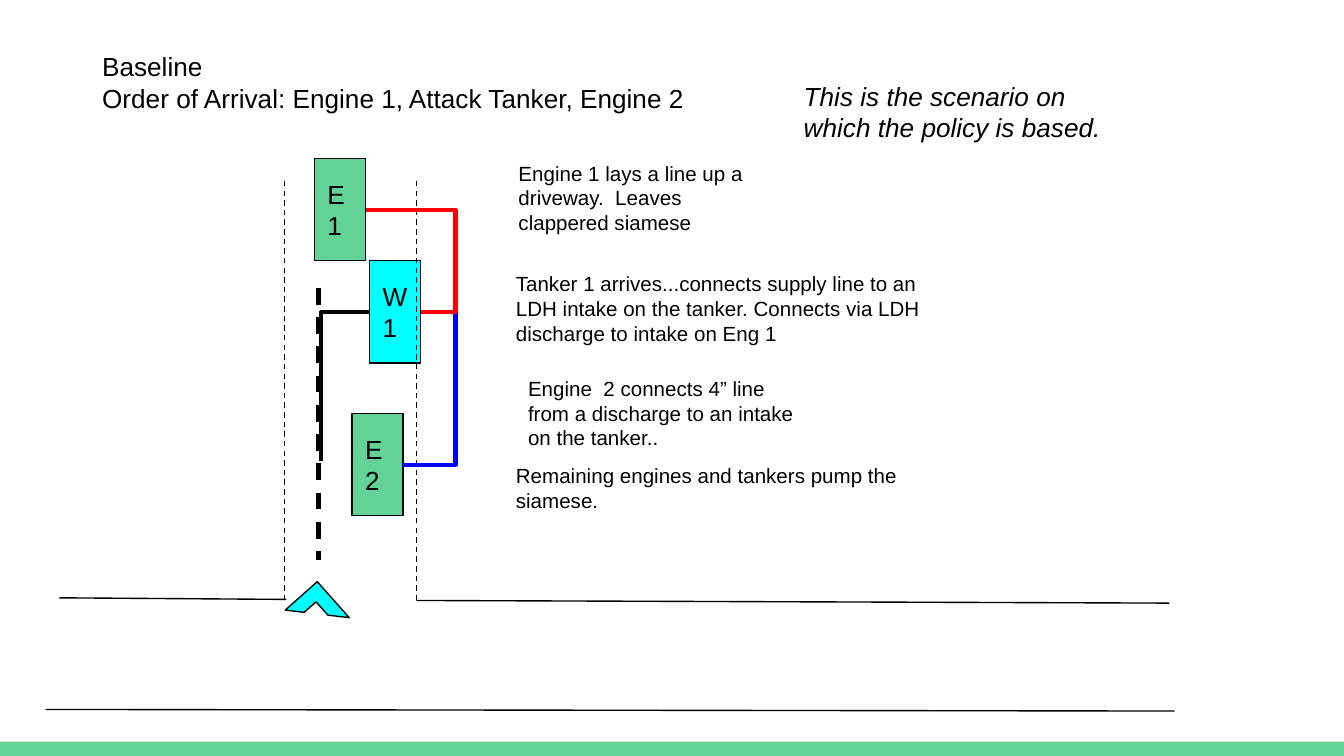
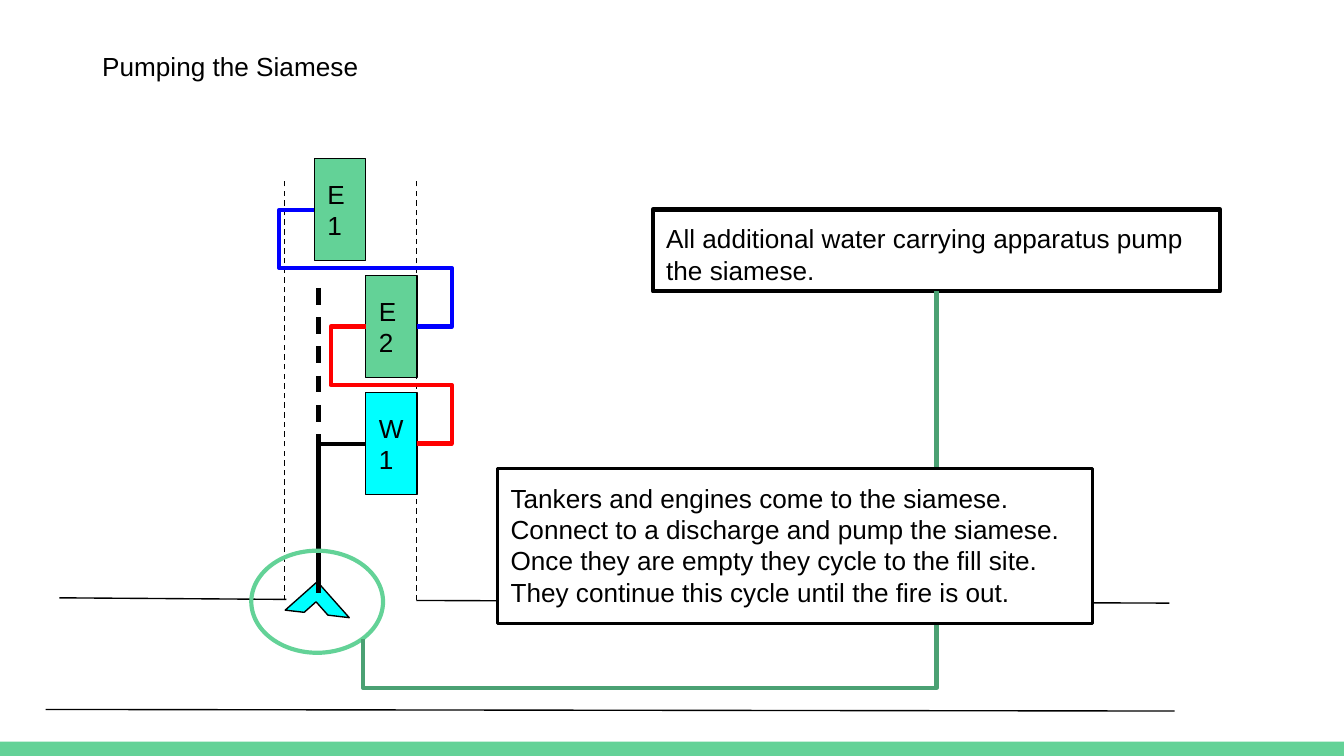
from lxml.etree import SubElement
from pptx import Presentation
from pptx.dml.color import RGBColor
from pptx.enum.dml import MSO_LINE
from pptx.enum.shapes import MSO_CONNECTOR as LINK, MSO_SHAPE as SHAPE
from pptx.enum.text import MSO_ANCHOR as ANCHOR, MSO_AUTO_SIZE as FIT, PP_ALIGN as ALIGN
from pptx.oxml.ns import qn
from pptx.util import Cm, Pt

GREEN = RGBColor(0x63, 0xD2, 0x97)
DARK_GREEN = RGBColor(0x4B, 0xA1, 0x73)
CYAN = RGBColor(0x00, 0xFF, 0xFF)
BLUE = RGBColor(0x00, 0x00, 0xFF)
RED = RGBColor(0xFF, 0x00, 0x00)
BLACK = RGBColor(0x00, 0x00, 0x00)
WHITE = RGBColor(0xFF, 0xFF, 0xFF)

FONT = "Arial"
WIDTH, HEIGHT = 25.4, 14.29
INSET = 0.25
THIN, THICK = 0.75, 2.25
TRUCK_WIDTH, TRUCK_HEIGHT = 0.97, 1.93
FIRST_TRUCK = (5.94, 3.0)
HOSE_REACH = 0.66  # how far a hose runs out beside a truck
HOSE_X, HOSE_TOP = 6.02, 5.44


# Text
def write(box, text, size=14, italic=False, anchor=ANCHOR.TOP):
    frame = box.text_frame
    frame.text = text
    frame.word_wrap = True
    frame.auto_size = FIT.NONE
    frame.vertical_anchor = anchor
    frame.margin_left = frame.margin_right = Cm(INSET)
    frame.margin_top = frame.margin_bottom = Cm(INSET)
    for para in frame.paragraphs:
        para.alignment = ALIGN.LEFT
        for span in para.runs:
            span.font.name = FONT
            span.font.size = Pt(size)
            span.font.italic = italic
            span.font.color.rgb = BLACK


def add_note(page, text, left, top, width, height, size=11, italic=False):
    box = page.shapes.add_textbox(Cm(left), Cm(top), Cm(width), Cm(height))
    write(box, text, size, italic)


def add_titled_page(deck, layout, title):
    page = deck.slides.add_slide(layout)
    box = page.shapes.title
    box.left, box.top, box.width, box.height = Cm(1.68), Cm(0.71), Cm(11.73), Cm(1.55)
    write(box, title)
    return page


# Shapes
def add_figure(page, kind, left, top, width, height, fill=None, line=BLACK, weight=THIN):
    shape = page.shapes.add_shape(kind, Cm(left), Cm(top), Cm(width), Cm(height))
    shape.shadow.inherit = False
    if fill is None:
        shape.fill.background()
    else:
        shape.fill.solid()
        shape.fill.fore_color.rgb = fill
    if line is None:
        shape.line.fill.background()
    else:
        shape.line.color.rgb = line
        shape.line.width = Pt(weight)
    return shape


def add_truck(page, name, place, fill=GREEN):
    truck = add_figure(page, SHAPE.RECTANGLE, *place, TRUCK_WIDTH, TRUCK_HEIGHT, fill)
    write(truck, name, anchor=ANCHOR.MIDDLE)


def left_of(place):
    return place[0], place[1] + TRUCK_HEIGHT / 2


def right_of(place):
    return place[0] + TRUCK_WIDTH, place[1] + TRUCK_HEIGHT / 2


# Lines
def add_link(page, kind, start, end, color, weight):
    link = page.shapes.add_connector(kind, *(Cm(value) for value in (*start, *end)))
    link.line.color.rgb = color
    link.line.width = Pt(weight)
    SubElement(link.element.spPr, qn("a:effectLst"))
    return link


def add_line(page, start, end, weight=THIN, dashed=False):
    line = add_link(page, LINK.STRAIGHT, start, end, BLACK, weight)
    if dashed:
        line.line.dash_style = MSO_LINE.DASH


def add_elbow(page, start, end, color, bends=()):
    """Draw a bent line that leaves sideways; bends are its x, y, x turns."""
    link = add_link(page, LINK.ELBOW, start, end, color, THICK)
    geometry = link.element.spPr.find(qn("a:prstGeom"))
    geometry.set("prst", f"bentConnector{len(bends) + 2}")
    guides = geometry.find(qn("a:avLst"))
    for index, bend in enumerate(bends):
        axis = index % 2
        ratio = (bend - start[axis]) / (end[axis] - start[axis])
        SubElement(guides, qn("a:gd"), name=f"adj{index + 1}",
                   fmla=f"val {round(ratio * 100000)}")
    return link


def add_upright_elbow(page, start, end, color, bend):
    """Draw a bent line that leaves downwards: a sideways one, turned 90 degrees."""
    middle_x, middle_y = (start[0] + end[0]) / 2, (start[1] + end[1]) / 2

    def turn(x, y):
        return middle_x + y - middle_y, middle_y - x + middle_x

    link = add_elbow(page, turn(*start), turn(*end), color, [turn(0, bend)[0]])
    link.rotation = 90


def add_s_hose(page, lower, upper, color):
    """Run a hose from the right of one truck to the left of the one above."""
    start, end = right_of(lower), left_of(upper)
    bends = start[0] + HOSE_REACH, (start[1] + end[1]) / 2, end[0] - HOSE_REACH
    add_elbow(page, start, end, color, bends)


# Scene shared by both slides
def add_roads(page):
    add_line(page, (1.12, 11.3), (5.41, 11.33))
    add_line(page, (0.86, 13.41), (22.2, 13.44))
    add_line(page, (7.87, 11.35), (22.1, 11.4))
    for side in (5.38, 7.87):
        add_line(page, (side, 11.35), (side, 3.35), dashed=True)


def add_siamese(page):
    siamese = add_figure(page, SHAPE.HALF_FRAME, 5.54, 11.2, 0.91, 0.81, CYAN)
    siamese.rotation = 48.4


def add_band(page, layout):
    band = add_figure(page, SHAPE.RECTANGLE, 0, 14.02, WIDTH, 0.27, GREEN, None)
    layout.shapes.element.append(band.element)


def fill_baseline(page):
    engine_1, engine_2, tanker = FIRST_TRUCK, (6.65, 7.82), (6.98, 4.93)
    add_truck(page, "E1", engine_1)
    add_truck(page, "E2", engine_2)
    add_truck(page, "W1", tanker, CYAN)
    add_roads(page)
    add_siamese(page)

    # Hoses
    bend = right_of(tanker)[0] + HOSE_REACH
    add_elbow(page, left_of(tanker), (6.07, 8.71), BLACK)
    add_elbow(page, right_of(engine_2), right_of(tanker), BLUE, [bend])
    add_elbow(page, right_of(tanker), right_of(engine_1), RED, [bend])
    add_line(page, (HOSE_X, HOSE_TOP), (HOSE_X, 10.59), THICK, dashed=True)

    # Steps
    add_note(page, "Engine 1 lays a line up a driveway.  Leaves clappered siamese",
             9.55, 2.79, 4.98, 1.55)
    add_note(page, "Tanker 1 arrives...connects supply line to an LDH intake on the tanker. "
             "Connects via LDH discharge to intake on Eng 1", 9.5, 4.88, 8.59, 1.93)
    add_note(page, "Engine  2 connects 4” line from a discharge to an intake on the tanker..",
             9.73, 6.86, 5.69, 1.93)
    add_note(page, "Remaining engines and tankers pump the siamese.", 9.5, 8.51, 8.59, 1.93)
    add_note(page, "This is the scenario on which the policy is based.",
             14.94, 1.27, 6.78, 2.08, size=14, italic=True)


def fill_pumping(page):
    engine_1, engine_2, tanker = FIRST_TRUCK, (6.91, 5.21), (6.91, 7.42)
    add_truck(page, "E1", engine_1)
    add_truck(page, "E2", engine_2)
    add_truck(page, "W1", tanker, CYAN)
    add_roads(page)
    add_siamese(page)

    # Hoses
    add_elbow(page, left_of(tanker), (HOSE_X, 11.2), BLACK)
    add_s_hose(page, engine_2, engine_1, BLUE)
    add_s_hose(page, tanker, engine_2, RED)
    add_line(page, (HOSE_X, HOSE_TOP), left_of(tanker)[:0] + (HOSE_X, left_of(tanker)[1]),
             THICK, dashed=True)

    # Callouts
    apparatus = add_figure(page, SHAPE.RECTANGLE, 12.34, 3.96, 10.72, 1.55, weight=THICK)
    write(apparatus, "All additional water carrying apparatus pump the siamese.")
    add_figure(page, SHAPE.OVAL, 4.75, 10.41, 2.49, 1.93, line=GREEN, weight=THICK)
    add_upright_elbow(page, (17.7, 5.51), (6.86, 12.07), DARK_GREEN, 13)
    cycle = add_figure(page, SHAPE.RECTANGLE, 9.4, 8.86, 11.25, 2.92, WHITE, weight=1.5)
    write(cycle, "Tankers and engines come to the siamese. Connect to a discharge and pump "
          "the siamese. Once they are empty they cycle to the fill site. "
          "They continue this cycle until the fire is out.")


def main():
    deck = Presentation()
    deck.slide_width, deck.slide_height = Cm(WIDTH), Cm(HEIGHT)
    layout = deck.slide_layouts[5]

    baseline = add_titled_page(
        deck, layout, "Baseline\nOrder of Arrival: Engine 1, Attack Tanker, Engine 2")
    add_band(baseline, layout)
    fill_baseline(baseline)

    fill_pumping(add_titled_page(deck, layout, "Pumping the Siamese"))
    deck.save("out.pptx")


if __name__ == "__main__":
    main()
